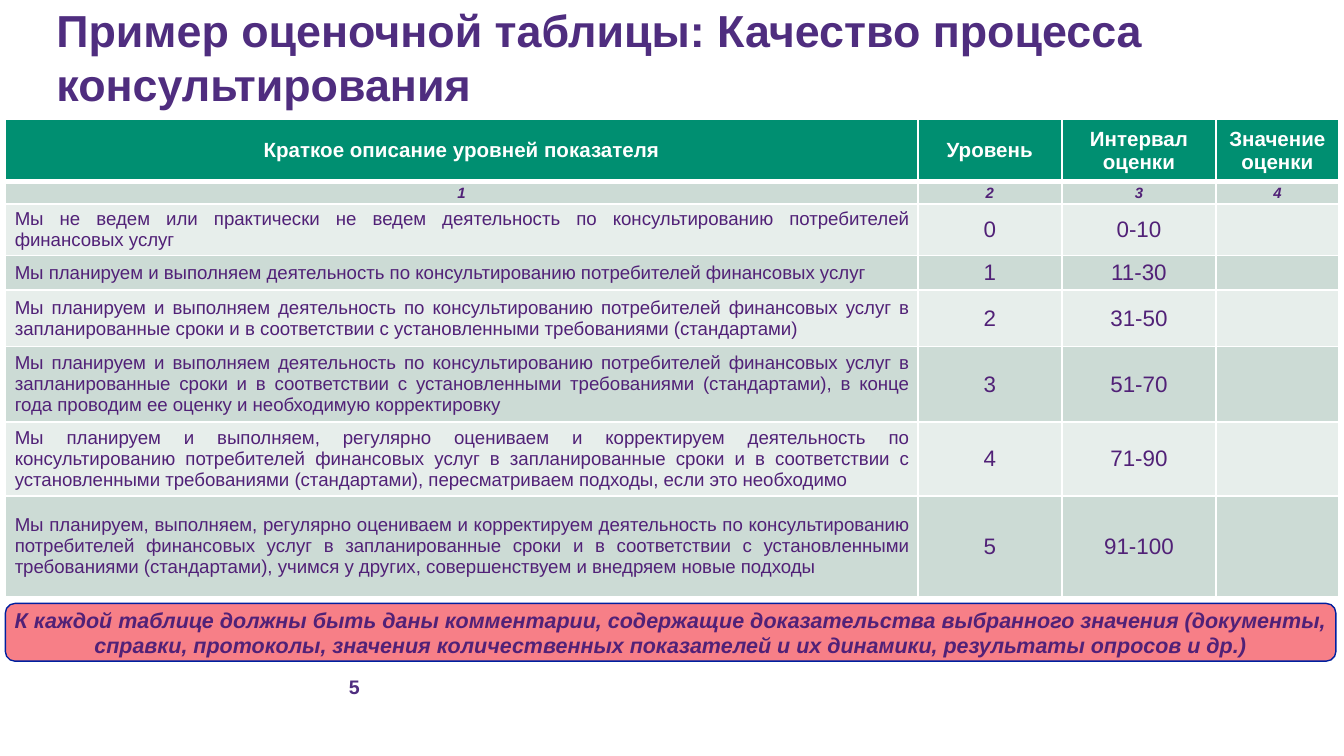
import pptx
import pptx.util
import pptx.dml.color
import pptx.enum.shapes
import pptx.enum.text
import pptx.oxml.ns
from lxml import etree

Inches = pptx.util.Inches
Pt = pptx.util.Pt
ALIGN = pptx.enum.text.PP_ALIGN
ANCHOR = pptx.enum.text.MSO_ANCHOR
qn = pptx.oxml.ns.qn

COLORS = {
    "title": "4F2D7F", "text": "512177", "white": "FFFFFF", "header": "008F71",
    "dark_band": "CCDBD5", "light_band": "E7EEEB", "note": "F00010", "note_line": "00209F",
}
COLUMNS = [6.79, 1.07, 1.15, 0.91]
ROW_HEIGHTS = [0.46, 0.17, 0.38, 0.26, 0.42, 0.56, 0.55, 0.75]
HEADERS = ["Краткое описание уровней показателя", "Уровень", "Интервал оценки", "Значение оценки"]
ACTIVITY = "деятельность по консультированию потребителей финансовых услуг"
STANDARDS = "в запланированные сроки и в соответствии с установленными требованиями (стандартами)"
PLAN = f"Мы планируем и выполняем {ACTIVITY}"
LEVELS = [
    (f"Мы не ведем или практически не ведем {ACTIVITY}", "0-10"),
    (PLAN, "11-30"),
    (f"{PLAN} {STANDARDS}", "31-50"),
    (f"{PLAN} {STANDARDS}, в конце года проводим ее оценку и необходимую корректировку", "51-70"),
    (f"Мы планируем и выполняем, регулярно оцениваем и корректируем {ACTIVITY} {STANDARDS}, "
     "пересматриваем подходы, если это необходимо", "71-90"),
    (f"Мы планируем, выполняем, регулярно оцениваем и корректируем {ACTIVITY} {STANDARDS}, "
     "учимся у других, совершенствуем и внедряем новые подходы", "91-100"),
]
NOTE = ("К каждой таблице должны быть даны комментарии, содержащие доказательства выбранного "
        "значения (документы, справки, протоколы, значения количественных показателей и их "
        "динамики, результаты опросов и др.)")


def rgb(name):
    """Return the named colour."""
    return pptx.dml.color.RGBColor.from_string(COLORS[name])


def write(tf, text, size, color="text", bold=False, italic=False, align=ALIGN.CENTER):
    """Write one formatted paragraph into a text frame."""
    p = tf.paragraphs[0]
    p.alignment = align
    if not text:
        etree.SubElement(p._p, qn("a:endParaRPr"), sz=str(size * 100))
        return
    r = p.add_run()
    r.text = text
    r.font.name = "Arial"
    r.font.size = Pt(size)
    r.font.bold = bold
    r.font.italic = italic
    r.font.color.rgb = rgb(color)


def set_frame(tf, anchor=ANCHOR.MIDDLE):
    """Make a text frame wrap without margins."""
    tf.word_wrap = True
    tf.auto_size = pptx.enum.text.MSO_AUTO_SIZE.NONE
    tf.vertical_anchor = anchor
    tf.margin_left = tf.margin_top = tf.margin_right = tf.margin_bottom = 0


def set_borders(cell, **widths):
    """Draw white cell borders with the given widths in points."""
    tcPr = cell._tc.get_or_add_tcPr()
    for side in "LRTB":
        ln = etree.SubElement(tcPr, qn(f"a:ln{side}"), w=str(Pt(widths.get(side, 1))))
        fill = etree.SubElement(ln, qn("a:solidFill"))
        etree.SubElement(fill, qn("a:srgbClr"), val=COLORS["white"])


def add_title(slide, left, top, width, height):
    """Place and format the slide title."""
    sp = slide.shapes.title
    sp.left, sp.top, sp.width, sp.height = map(Inches, (left, top, width, height))
    set_frame(sp.text_frame, ANCHOR.TOP)
    write(sp.text_frame, "Пример оценочной таблицы: Качество процесса консультирования",
          24, "title", bold=True, align=ALIGN.LEFT)


def add_levels_table(slide, left, top):
    """Add the table of levels with its header and column numbers."""
    rows = [HEADERS, ["1", "2", "3", "4"]]
    rows += [[text, str(level), interval, ""] for level, (text, interval) in enumerate(LEVELS)]
    table = slide.shapes.add_table(
        len(rows), len(COLUMNS), Inches(left), Inches(top),
        Inches(sum(COLUMNS)), Inches(sum(ROW_HEIGHTS))).table
    table.horz_banding = False
    for column, width in zip(table.columns, COLUMNS):
        column.width = Inches(width)
    for i, values in enumerate(rows):
        table.rows[i].height = Inches(ROW_HEIGHTS[i])
        band = "header" if i == 0 else "dark_band" if i % 2 else "light_band"
        for j, value in enumerate(values):
            cell = table.cell(i, j)
            cell.margin_left = cell.margin_right = Inches(0.07)
            cell.margin_top = cell.margin_bottom = 0
            cell.vertical_anchor = ANCHOR.MIDDLE
            set_borders(cell, T=3 if i == 1 else 1, B=3 if i == 0 else 1)
            cell.fill.solid()
            cell.fill.fore_color.rgb = rgb(band)
            if i == 0:
                style = dict(size=11, color="white", bold=True)
            elif i == 1:
                style = dict(size=8, bold=True, italic=True)
            elif j == 0:
                style = dict(size=10, align=ALIGN.JUSTIFY)
            else:
                style = dict(size=12)
            write(cell.text_frame, value, **style)


def add_note(slide, left, top, width, height):
    """Add the rounded note below the table."""
    sp = slide.shapes.add_shape(pptx.enum.shapes.MSO_SHAPE.ROUNDED_RECTANGLE,
                                *map(Inches, (left, top, width, height)))
    sp.shadow.inherit = False
    sp.fill.solid()
    sp.fill.fore_color.rgb = rgb("note")
    color = sp._element.spPr.find(qn("a:solidFill"))[0]
    etree.SubElement(color, qn("a:alpha"), val="50000")
    sp.line.color.rgb = rgb("note_line")
    sp.line.width = Pt(0.75)
    set_frame(sp.text_frame)
    write(sp.text_frame, NOTE, 11.5, bold=True, italic=True)


def add_page_number(slide, left, top, width, height):
    """Add the page number."""
    sp = slide.shapes.add_textbox(*map(Inches, (left, top, width, height)))
    set_frame(sp.text_frame)
    write(sp.text_frame, "5", 10.5, "title", bold=True)


def main():
    """Build and save the slide."""
    prs = pptx.Presentation()
    prs.slide_width = Inches(10)
    prs.slide_height = prs.slide_width * 9 // 16
    slide = prs.slides.add_slide(prs.slide_layouts[5])
    add_title(slide, 0.42, 0.02, 9.19, 0.94)
    add_levels_table(slide, 0.04, 0.89)
    add_note(slide, 0.04, 4.49, 9.9, 0.43)
    add_page_number(slide, 1.99, 4.97, 1.29, 0.28)
    prs.save("out.pptx")


if __name__ == "__main__":
    main()
